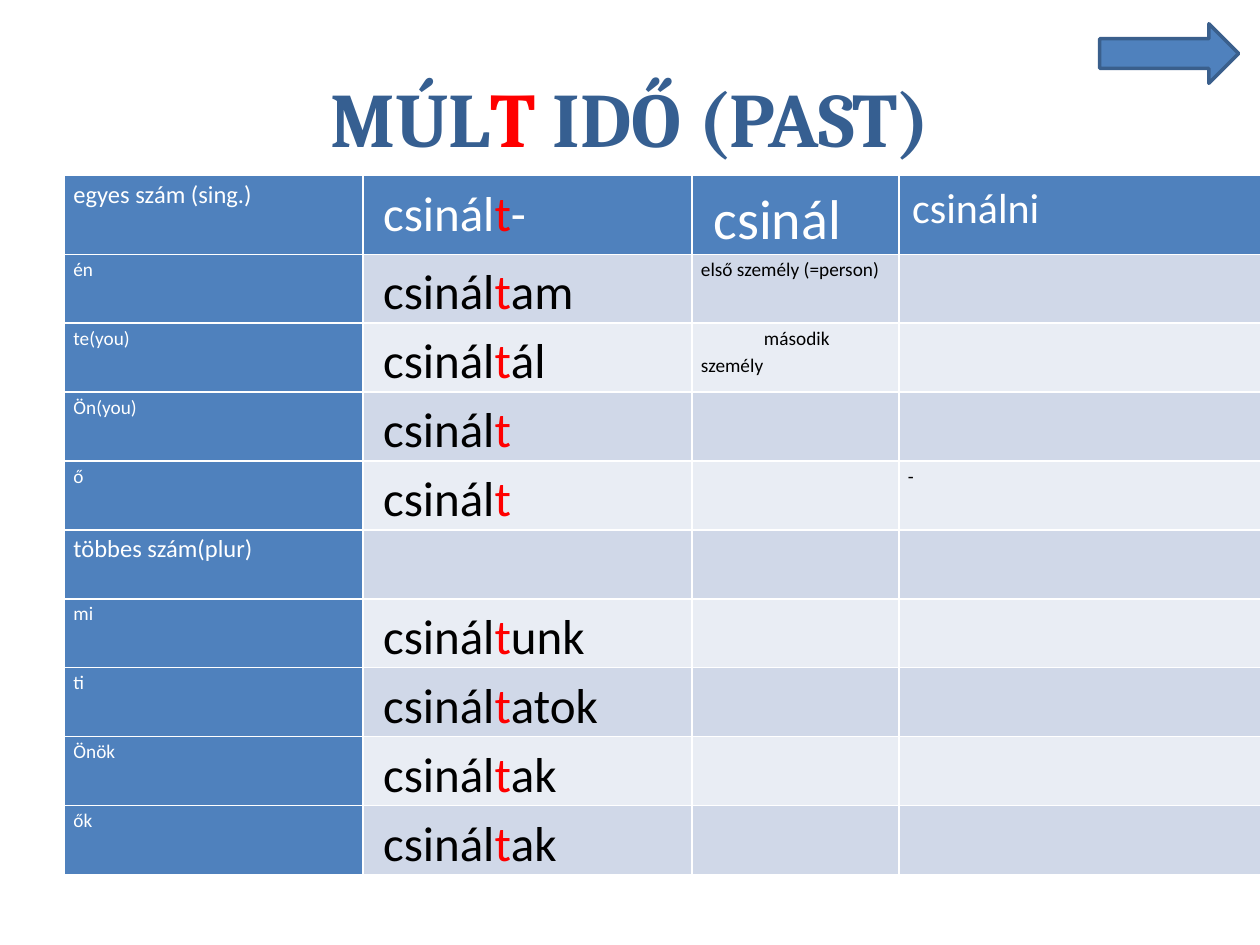
import lxml.etree
import pptx
import pptx.dml.color
import pptx.enum.shapes
import pptx.enum.text
import pptx.oxml.ns
import pptx.util
from pptx.util import Cm, Pt

COLORS = {
    "blue": "4F81BD", "outline": "3A5F8C", "title": "365F91", "red": "FF0000",
    "white": "FFFFFF", "black": "000000", "band_dark": "D0D8E8", "band_light": "E9EDF4",
}
COLUMN_WIDTHS = (6.02, 6.63, 4.17, 7.29)
HEADER_HEIGHT, ROW_HEIGHT = 1.56, 1.39

# Pronoun, its size, and the ending after "csinált" (None leaves the cell empty)
CONJUGATION = [
    ("én", 11, "am"), ("te(you)", 11, "ál"), ("Ön(you)", 11, ""), ("ő", 11, ""),
    ("többes szám(plur)", 14, None),
    ("mi", 11, "unk"), ("ti", 11, "atok"), ("Önök", 11, "ak"), ("ők", 11, "ak"),
]
NOTES = {(1, 2): "első személy (=person)", (2, 2): "\tmásodik személy", (4, 3): "-"}


def rgb(name):
    return pptx.dml.color.RGBColor.from_string(COLORS[name])


def add_spans(para, spans):
    """Add (text, size, colour) runs to a paragraph."""
    for text, size, color in spans:
        span = para.add_run()
        span.text = text
        span.font.size = Pt(size)
        span.font.color.rgb = rgb(color)


def past_form(ending, color):
    """Runs for the verb with its past-tense t in red."""
    spans = [(" csinál", 28, color), ("t", 28, "red")]
    return spans + [(ending, 28, color)] if ending else spans


def add_borders(cell):
    properties = cell._tc.get_or_add_tcPr()
    for index, side in enumerate(("lnL", "lnR", "lnT", "lnB")):
        line = lxml.etree.Element(pptx.oxml.ns.qn(f"a:{side}"), w=str(Pt(1)))
        fill = lxml.etree.SubElement(line, pptx.oxml.ns.qn("a:solidFill"))
        lxml.etree.SubElement(fill, pptx.oxml.ns.qn("a:srgbClr"), val=COLORS["white"])
        properties.insert(index, line)


def format_cell(cell, fill, spans):
    cell.fill.solid()
    cell.fill.fore_color.rgb = rgb(fill)
    add_borders(cell)
    cell.margin_left = cell.margin_right = Cm(0.18)
    cell.margin_top = cell.margin_bottom = 0
    para = cell.text_frame.paragraphs[0]
    para.line_spacing = 1.15
    para.space_before = Pt(10)
    para.font.name = "Calibri"
    add_spans(para, spans)


def fill_title(page, left, top, width, height):
    title = page.shapes.title
    title.left, title.top, title.width, title.height = map(Cm, (left, top, width, height))
    frame = title.text_frame
    frame.vertical_anchor = pptx.enum.text.MSO_ANCHOR.MIDDLE
    para = frame.paragraphs[0]
    para.alignment = pptx.enum.text.PP_ALIGN.CENTER
    add_spans(para, [("MÚL", 44, "title"), ("T", 44, "red"), (" IDŐ (PAST)", 44, "title")])
    for span in para.runs:
        span.font.name = "Cambria"
        span.font.bold = True


def table_rows():
    """Yield the runs of every cell, row by row."""
    yield [
        [("egyes szám (sing.)", 14, "white")],
        past_form("-", "white"),
        [(" csinál", 32, "white")],
        [(" ", 11, "white"), ("csinálni", 24, "white")],
    ]
    for row, (pronoun, size, ending) in enumerate(CONJUGATION, start=1):
        notes = [[(NOTES[row, column], 11, "black")] if (row, column) in NOTES else []
                 for column in (2, 3)]
        verb = [] if ending is None else past_form(ending, "black")
        yield [[(pronoun, size, "white")], verb, *notes]


def add_conjugation_table(page, left, top):
    row_count = len(CONJUGATION) + 1
    height = HEADER_HEIGHT + ROW_HEIGHT * len(CONJUGATION)
    table = page.shapes.add_table(row_count, len(COLUMN_WIDTHS), Cm(left), Cm(top),
                                  Cm(sum(COLUMN_WIDTHS)), Cm(height)).table
    table.first_row = table.horz_banding = False
    for column, width in zip(table.columns, COLUMN_WIDTHS):
        column.width = Cm(width)
    for row, cells in enumerate(table_rows()):
        table.rows[row].height = Cm(ROW_HEIGHT if row else HEADER_HEIGHT)
        band = "band_dark" if row % 2 else "band_light"
        for column, spans in enumerate(cells):
            fill = "blue" if row == 0 or column == 0 else band
            format_cell(table.cell(row, column), fill, spans)


def add_next_arrow(page, left, top, width, height):
    arrow = page.shapes.add_shape(pptx.enum.shapes.MSO_SHAPE.RIGHT_ARROW,
                                  *map(Cm, (left, top, width, height)))
    arrow.shadow.inherit = False
    arrow.fill.solid()
    arrow.fill.fore_color.rgb = rgb("blue")
    arrow.line.color.rgb = rgb("outline")
    arrow.line.width = Pt(2)


def main():
    deck = pptx.Presentation()
    deck.slide_width, deck.slide_height = Cm(25.4), Cm(19.05)
    page = deck.slides.add_slide(deck.slide_layouts[5])
    fill_title(page, 1.27, 0.76, 22.86, 3.18)
    add_conjugation_table(page, 1.3, 3.54)
    add_next_arrow(page, 22.17, 0.48, 2.8, 1.2)
    deck.save("out.pptx")


if __name__ == "__main__":
    main()
